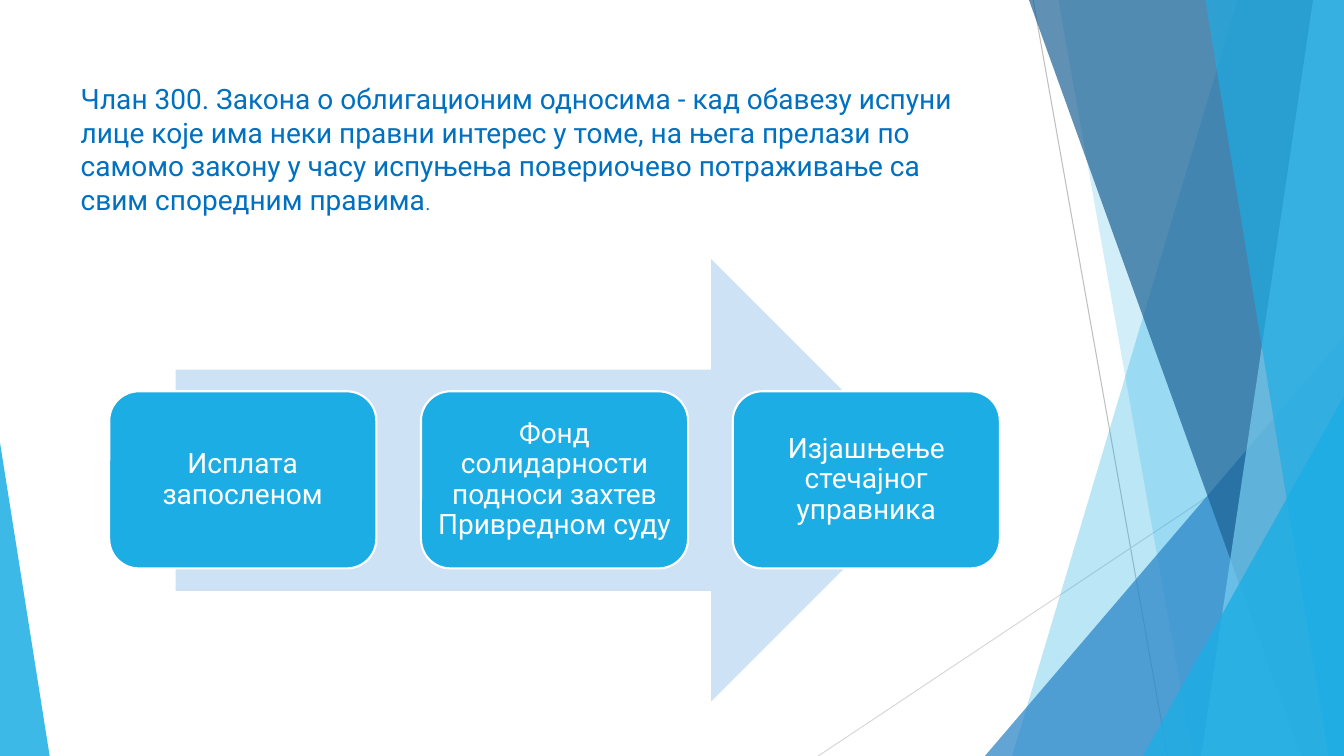
from lxml import etree
from pptx import Presentation
from pptx.dml.color import RGBColor
from pptx.enum.shapes import MSO_CONNECTOR, MSO_SHAPE
from pptx.enum.text import MSO_ANCHOR, MSO_AUTO_SIZE, PP_ALIGN
from pptx.oxml.ns import qn
from pptx.util import Pt

STRAIGHT = MSO_CONNECTOR.STRAIGHT
TRIANGLE = MSO_SHAPE.ISOSCELES_TRIANGLE
ARROW = MSO_SHAPE.RIGHT_ARROW
ROUNDED = MSO_SHAPE.ROUNDED_RECTANGLE
MIDDLE, TOP = MSO_ANCHOR.MIDDLE, MSO_ANCHOR.TOP
CENTER, LEFT = PP_ALIGN.CENTER, PP_ALIGN.LEFT

WIDTH, HEIGHT = 960, 540
COLORS = {
    "sky": "1CADE4", "blue": "2683C6", "navy": "1D6294", "light": "77CEEF",
    "arrow": "CDE3F5", "text": "0070C0", "white": "FFFFFF",
    "grey": "BFBFBF", "pale_grey": "D9D9D9",
}


class SlideBuilder:
    font = "Roboto"
    size = 20

    def __init__(self, slide):
        self.slide = slide
        self.shapes = slide.shapes

    def color(self, name):
        return RGBColor.from_string(COLORS[name])

    def paint(self, shape, color, opacity=100):
        shape.shadow.inherit = False
        shape.line.fill.background()
        shape.fill.solid()
        shape.fill.fore_color.rgb = self.color(color)
        if opacity < 100:
            srgb = shape.fill._xPr.find(qn("a:solidFill"))[0]
            etree.SubElement(srgb, qn("a:alpha"), val=str(opacity * 1000))

    def line(self, x1, y1, x2, y2, color):
        line = self.shapes.add_connector(STRAIGHT, Pt(x1), Pt(y1), Pt(x2), Pt(y2))
        line.line.color.rgb = self.color(color)
        line.line.width = Pt(0.75)
        etree.SubElement(line._element.spPr, qn("a:effectLst"))

    def band(self, top_x, bottom_x, color, opacity):
        """Full-height band from a slanted left edge to the slide's right edge."""
        outline = self.shapes.build_freeform(Pt(top_x), 0)
        corners = [(WIDTH, 0), (WIDTH, HEIGHT), (bottom_x, HEIGHT)]
        outline.add_line_segments([(Pt(x), Pt(y)) for x, y in corners])
        self.paint(outline.convert_to_shape(), color, opacity)

    def shape(self, kind, x, y, width, height, color, opacity=100):
        shape = self.shapes.add_shape(kind, Pt(x), Pt(y), Pt(width), Pt(height))
        self.paint(shape, color, opacity)
        return shape

    def triangle(self, x, y, width, apex, color, opacity):
        """Right triangle standing on the slide's bottom edge."""
        triangle = self.shape(TRIANGLE, x, y, width, HEIGHT - y, color, opacity)
        triangle.adjustments[0] = apex

    def format_runs(self, paragraph, color):
        for run in paragraph.runs:
            run.font.name = self.font
            run.font.size = Pt(self.size)
            run.font.color.rgb = self.color(color)

    def step(self, x, y, width, height, text):
        box = self.shape(ROUNDED, x, y, width, height, "sky")
        box.line.color.rgb = self.color("white")
        box.line.width = Pt(1.5)
        frame = box.text_frame
        frame.word_wrap = True
        frame.vertical_anchor = MIDDLE
        frame.margin_left = frame.margin_right = Pt(6)
        frame.margin_top = frame.margin_bottom = Pt(6)
        frame.text = text
        paragraph = frame.paragraphs[0]
        paragraph.alignment = CENTER
        paragraph.line_spacing = 0.9
        self.format_runs(paragraph, "white")

    def body(self, x, y, width, height, text, ending):
        body = self.slide.placeholders[1]
        body.left, body.top, body.width, body.height = Pt(x), Pt(y), Pt(width), Pt(height)
        frame = body.text_frame
        frame.word_wrap = True
        frame.auto_size = MSO_AUTO_SIZE.NONE
        frame.vertical_anchor = TOP
        frame.text = text
        paragraph = frame.paragraphs[0]
        paragraph.alignment = LEFT
        paragraph.space_before = Pt(10)
        full_stop = paragraph.add_run()
        full_stop.text = ending
        self.format_runs(paragraph, "text")
        full_stop.font.size = Pt(14)
        properties = paragraph._p.get_or_add_pPr()
        properties.set("marL", "0")
        properties.set("indent", "0")
        etree.SubElement(properties, qn("a:buNone"))


def main():
    presentation = Presentation()
    presentation.slide_width, presentation.slide_height = Pt(WIDTH), Pt(HEIGHT)
    slide = presentation.slides.add_slide(presentation.slide_layouts[1])
    title = slide.shapes.title._element
    title.getparent().remove(title)
    builder = SlideBuilder(slide)

    # Background facets
    builder.line(738, 0, 834, HEIGHT, "grey")
    builder.line(WIDTH, 290, 584.5, HEIGHT, "pale_grey")
    builder.band(884, 723, "sky", 30)
    builder.band(756, 852, "sky", 20)
    builder.triangle(703.5, 240, 256.5, 1, "blue", 72)
    builder.band(735, 929.5, "navy", 70)
    builder.band(938, 858, "light", 70)
    builder.band(861, 949, "sky", 65)
    builder.triangle(816.5, 283, 143.5, 1, "sky", 80)
    builder.triangle(0, 316, 35.5, 0, "sky", 85)

    # Process arrow and its steps
    builder.shape(ARROW, 125.5, 185, 540.5, 316, "arrow")
    steps = [
        "Исплата запосленом",
        "Фонд солидарности подноси захтев Привредном суду",
        "Изјашњење стечајног управника",
    ]
    for index, text in enumerate(steps):
        builder.step(78 + 222.7 * index, 279.5, 190.8, 126.5, text)

    # Quoted article of law
    builder.body(
        50.4, 54.7, 664.6, 113.8,
        "Члан 300. Закона о облигационим односима - кад обавезу испуни лице "
        "које има неки правни интерес у томе, на њега прелази по самомо закону "
        "у часу испуњења повериочево потраживање са свим споредним правима",
        ".",
    )

    presentation.save("out.pptx")


if __name__ == "__main__":
    main()
